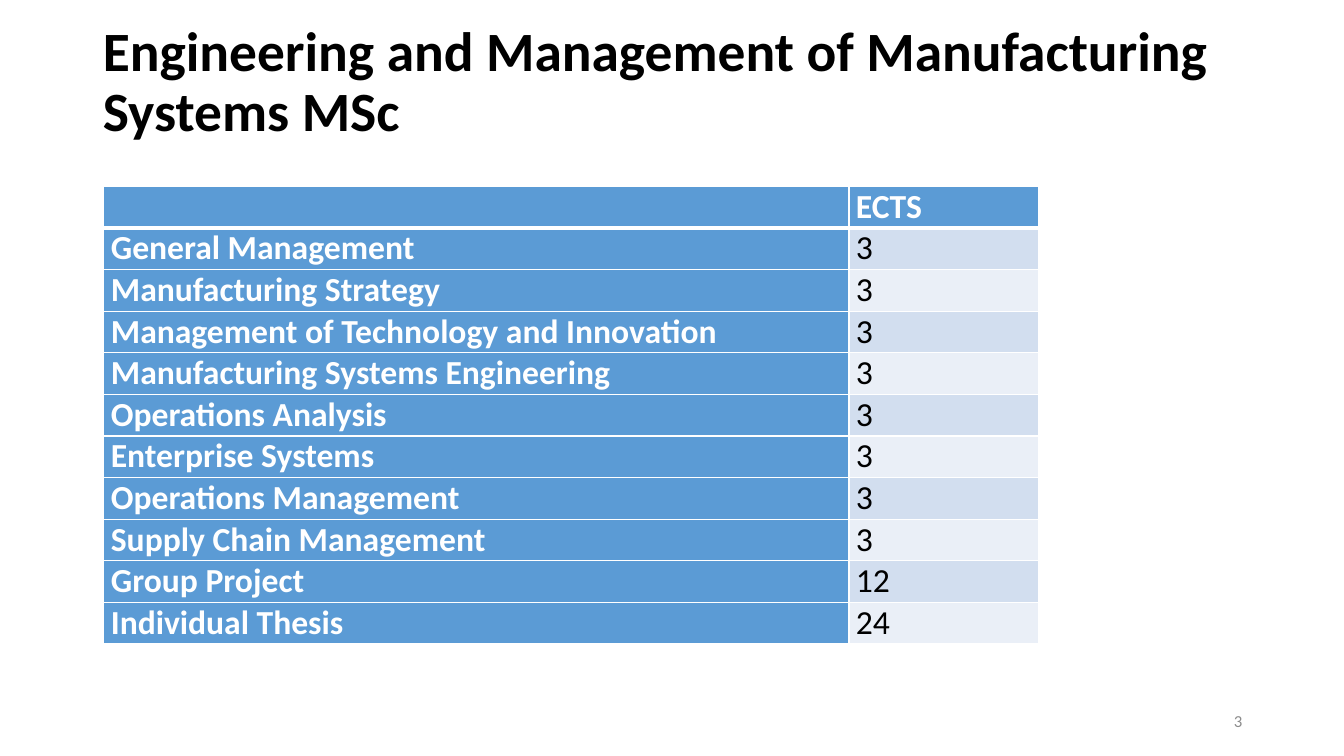
"""Build a slide that lists course modules with their ECTS credits."""
from pptx import Presentation, oxml
from pptx import util as u
from pptx.dml.color import RGBColor
from pptx.enum import text
from pptx.oxml.ns import qn

HUES = {
    "ink": "000000",
    "white": "FFFFFF",
    "blue": "5B9BD5",
    "odd": "D2DEEF",
    "even": "EAEFF7",
    "gray": "8C8C8C",
}
COURSES = [
    ("General Management", 3),
    ("Manufacturing Strategy", 3),
    ("Management of Technology and Innovation", 3),
    ("Manufacturing Systems Engineering", 3),
    ("Operations Analysis", 3),
    ("Enterprise Systems", 3),
    ("Operations Management", 3),
    ("Supply Chain Management", 3),
    ("Group Project", 12),
    ("Individual Thesis", 24),
]


def write(frame, words, size=24, hue="ink", bold=False, align="LEFT", space=None):
    """Put formatted words in the first paragraph of a text frame."""
    para = frame.paragraphs[0]
    para.alignment = getattr(text.PP_ALIGN, align)
    para.line_spacing = space
    run = para.add_run()
    run.text = words
    font = run.font
    font.name, font.size, font.bold = "Calibri", u.Pt(size), bold
    font.color.rgb = RGBColor.from_string(HUES[hue])


def place(shape, left, top, width, height):
    """Move a shape to a box and centre its text vertically."""
    shape.left, shape.top = u.Inches(left), u.Inches(top)
    shape.width, shape.height = u.Inches(width), u.Inches(height)
    shape.text_frame.word_wrap = True
    shape.text_frame.auto_size = text.MSO_AUTO_SIZE.NONE
    shape.text_frame.vertical_anchor = text.MSO_ANCHOR.MIDDLE


def edge(cell, side, width):
    """Draw one white border of a cell."""
    props = cell._tc.get_or_add_tcPr()
    line = oxml.xmlchemy.OxmlElement(f"a:ln{side}")
    line.set("w", str(u.Pt(width)))
    fill = line.makeelement(qn("a:solidFill"))
    fill.append(fill.makeelement(qn("a:srgbClr"), {"val": HUES["white"]}))
    line.append(fill)
    props.append(line)


def style(cell, hue, top=1, bottom=1):
    """Set the margins, borders and fill of a cell."""
    cell.margin_left = cell.margin_right = u.Inches(0.07)
    cell.margin_top = cell.margin_bottom = 0
    for side, width in zip("LRTB", (1, 1, top, bottom)):
        edge(cell, side, width)
    cell.fill.solid()
    cell.fill.fore_color.rgb = RGBColor.from_string(HUES[hue])


def add_grid(slide):
    """Add the table of courses and credits."""
    rows = [("", "ECTS")] + COURSES
    box = map(u.Inches, (1.03, 1.85, 9.27, 4.54))
    table = slide.shapes.add_table(len(rows), 2, *box).table
    table.first_col = True
    for col, width in zip(table.columns, (7.39, 1.88)):
        col.width = u.Inches(width)
    for i, row in enumerate(rows):
        for j, value in enumerate(row):
            cell = table.cell(i, j)
            head = i == 0 or j == 0
            band = "odd" if i % 2 else "even"
            style(cell, "blue" if head else band,
                  top=3 if i == 1 else 1, bottom=3 if i == 0 else 1)
            if value:
                write(cell.text_frame, str(value),
                      hue="white" if head else "ink", bold=head)


def main():
    """Build and save the slide."""
    deck = Presentation()
    deck.slide_width, deck.slide_height = u.Inches(13.33), u.Inches(7.5)
    slide = deck.slides.add_slide(deck.slide_layouts[5])
    title = slide.shapes.title
    place(title, 0.92, 0.1, 11.5, 1.45)
    write(title.text_frame, "Engineering and Management of Manufacturing Systems MSc",
          size=39.6, bold=True, space=0.9)
    add_grid(slide)
    number = slide.shapes.add_textbox(0, 0, 0, 0)
    place(number, 9.42, 6.95, 3, 0.4)
    write(number.text_frame, "3", size=12, hue="gray", align="RIGHT")
    deck.save("out.pptx")


if __name__ == "__main__":
    main()
